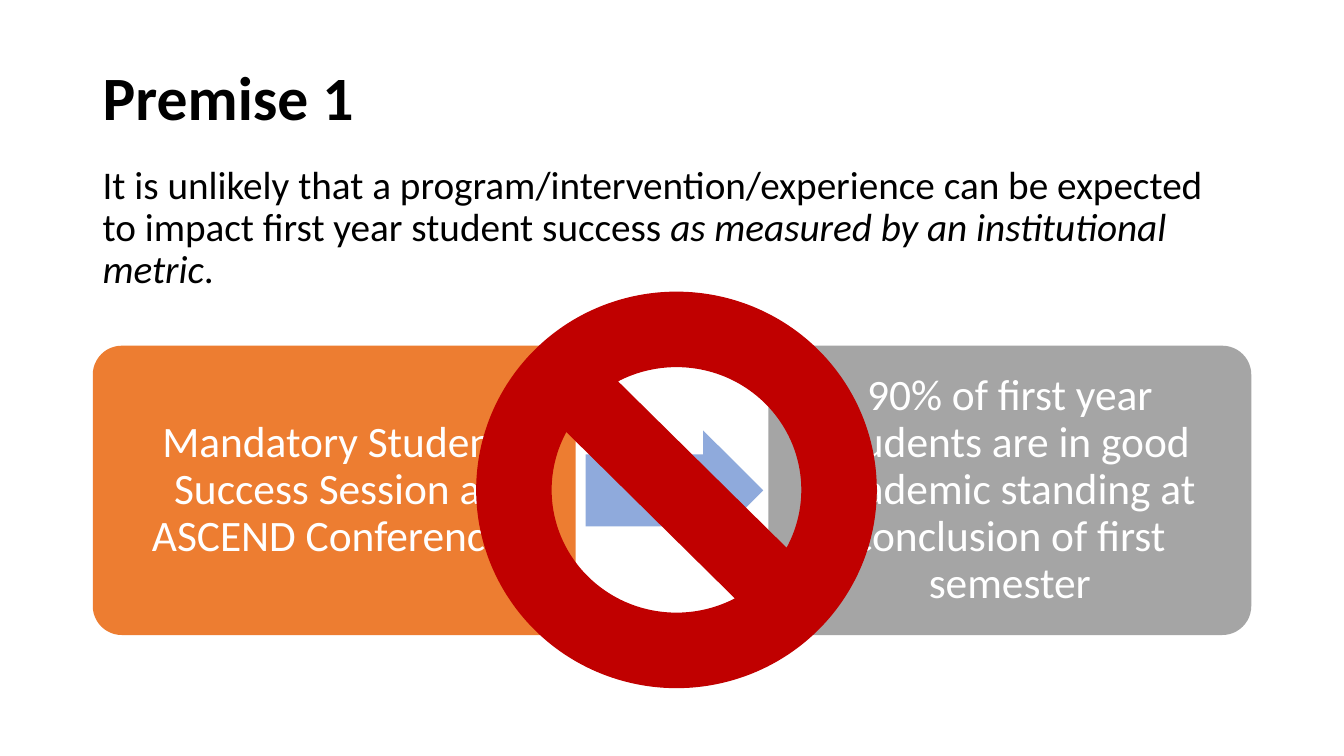
"""Build the Premise 1 slide: a programme, its hoped-for outcome and a prohibition sign."""
from dataclasses import dataclass

from pptx import Presentation
from pptx import util as u
from pptx.dml.color import RGBColor
from pptx.enum import shapes, text


@dataclass(frozen=True)
class Theme:
    """Colours, font and type sizes of the slide."""
    font: str = "Calibri"
    ink: str = "000000"
    paper: str = "FFFFFF"
    program: str = "ED7D31"
    outcome: str = "A5A5A5"
    arrow: str = "8FAADC"
    ban: str = "C00000"
    title_size: int = 44
    body_size: int = 28
    card_size: int = 31


@dataclass(frozen=True)
class Area:
    """A rectangle in inches."""
    left: float
    top: float
    width: float
    height: float

    def lengths(self) -> tuple:
        """Return the four values as lengths."""
        return tuple(u.Inches(side) for side in (self.left, self.top, self.width, self.height))


@dataclass(frozen=True)
class Span:
    """A piece of text in one style."""
    words: str
    bold: bool = False
    italic: bool = False


@dataclass(frozen=True)
class Block:
    """Text with its place, size and anchor."""
    area: Area
    size: int
    anchor: text.MSO_ANCHOR
    spans: tuple
    space_before: int = 0


@dataclass(frozen=True)
class Figure:
    """A filled preset shape, with a label if it has one."""
    kind: shapes.MSO_SHAPE
    area: Area
    fill: str
    adjustments: tuple = ()
    label: str = ""
    outlined: bool = False


THEME = Theme()
MARGIN = 0.92
CARD_TOP, CARD_WIDTH, CARD_HEIGHT = 3.43, 4.79, 2.87
CARD_PITCH = 6.7
CARD_INSET = 0.21

BLOCKS = (
    Block(Area(MARGIN, 0.27, 11.5, 1.45), THEME.title_size, text.MSO_ANCHOR.MIDDLE,
          (Span("Premise 1", bold=True),)),
    Block(Area(MARGIN, 1.59, 11.5, 4.76), THEME.body_size, text.MSO_ANCHOR.TOP,
          (Span("It is unlikely that a program/intervention/experience can be expected "
                "to impact first year student success "),
           Span("as measured by an institutional metric", italic=True),
           Span(".")), space_before=10),
)


def card(column: int, fill: str, label: str) -> Figure:
    """Describe one of the two rounded cards."""
    area = Area(MARGIN + column * CARD_PITCH, CARD_TOP, CARD_WIDTH, CARD_HEIGHT)
    return Figure(shapes.MSO_SHAPE.ROUNDED_RECTANGLE, area, fill, (0.1,), label)


FLOW = (
    card(0, THEME.program, "Mandatory Student Success Session at ASCEND Conference "),
    Figure(shapes.MSO_SHAPE.RIGHT_ARROW, Area(5.81, 4.27, 1.76, 1.19), THEME.arrow, (0.6, 0.5)),
    card(1, THEME.outcome, "90% of first year students are in good academic standing "
                           "at conclusion of first semester"),
)
BAN = Figure(shapes.MSO_SHAPE.NO_SYMBOL, Area(4.73, 2.9, 3.96, 3.92), THEME.ban, outlined=True)


def style_span(span, size: int, color: str) -> None:
    """Apply the theme font, a size and a colour to a run."""
    span.font.name = THEME.font
    span.font.size = u.Pt(size)
    span.font.color.rgb = RGBColor.from_string(color)


def draw_block(page, block: Block) -> None:
    """Draw a text block made of styled spans."""
    box = page.shapes.add_textbox(*block.area.lengths())
    frame = box.text_frame
    frame.word_wrap = True
    frame.vertical_anchor = block.anchor
    para = frame.paragraphs[0]
    para.line_spacing = 0.9
    para.space_before = u.Pt(block.space_before)
    for part in block.spans:
        span = para.add_run()
        span.text = part.words
        style_span(span, block.size, THEME.ink)
        span.font.bold = part.bold
        span.font.italic = part.italic


def draw_figure(page, figure: Figure) -> None:
    """Draw a preset shape and its centred label."""
    shape = page.shapes.add_shape(figure.kind, *figure.area.lengths())
    shape.shadow.inherit = False
    shape.fill.solid()
    shape.fill.fore_color.rgb = RGBColor.from_string(figure.fill)
    if figure.outlined:
        shape.line.color.rgb = RGBColor.from_string(figure.fill)
        shape.line.width = u.Pt(1)
    else:
        shape.line.fill.background()
    for index, value in enumerate(figure.adjustments):
        shape.adjustments[index] = value
    if figure.label:
        draw_label(shape.text_frame, figure.label)


def draw_label(frame, label: str) -> None:
    """Write a card's label."""
    frame.text = label
    frame.word_wrap = True
    frame.vertical_anchor = text.MSO_ANCHOR.MIDDLE
    frame.margin_left = frame.margin_right = u.Inches(CARD_INSET)
    frame.margin_top = frame.margin_bottom = u.Inches(CARD_INSET)
    para = frame.paragraphs[0]
    para.alignment = text.PP_ALIGN.CENTER
    para.line_spacing = 0.9
    style_span(para.runs[0], THEME.card_size, THEME.paper)


def main() -> None:
    """Build and save the deck."""
    deck = Presentation()
    deck.slide_width = u.Inches(13.33)
    deck.slide_height = u.Inches(7.5)
    page = deck.slides.add_slide(deck.slide_layouts[6])
    for figure in FLOW:
        draw_figure(page, figure)
    for block in BLOCKS:
        draw_block(page, block)
    draw_figure(page, BAN)
    deck.save("out.pptx")


if __name__ == "__main__":
    main()
